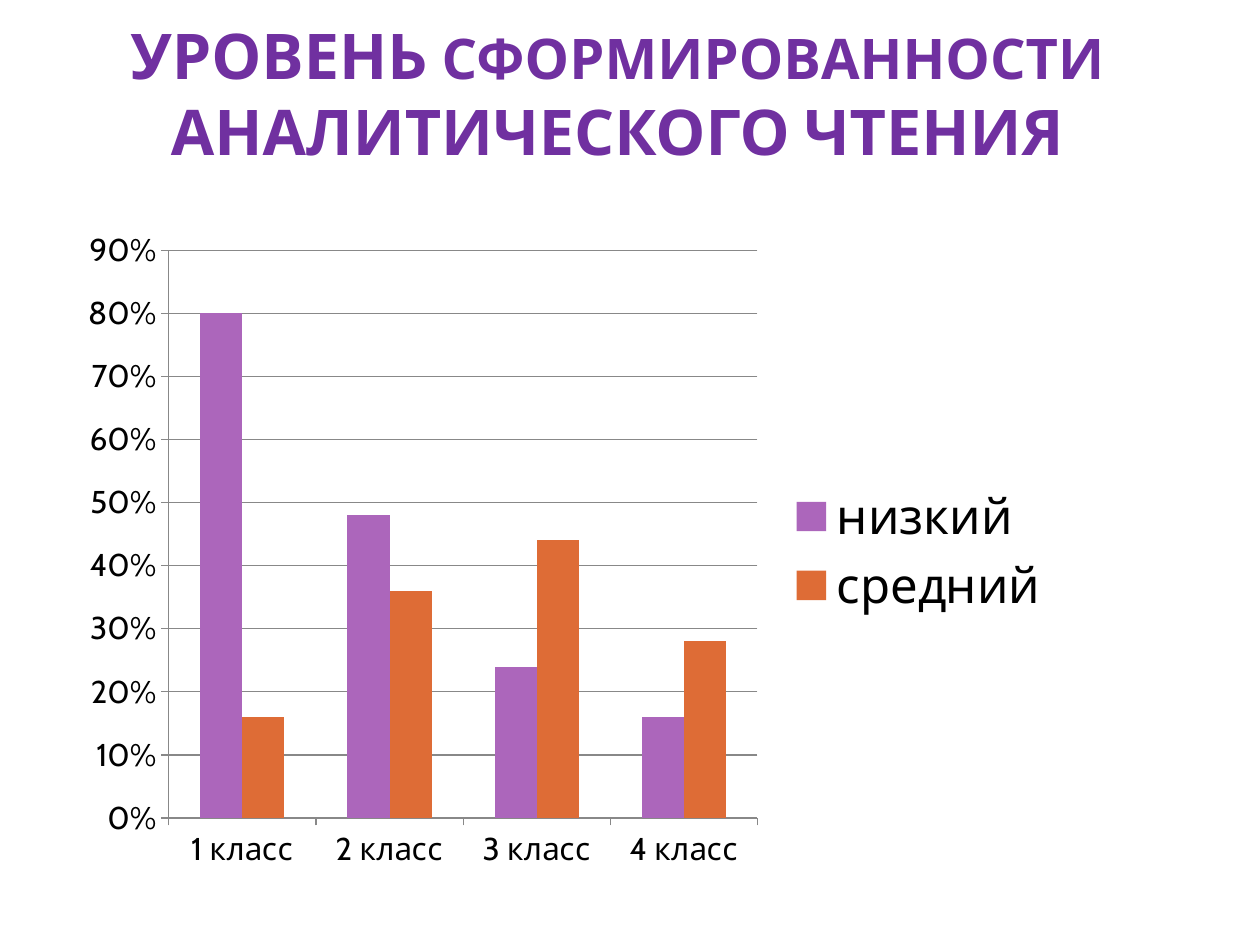
import pptx
import pptx.chart.data
import pptx.dml.color
import pptx.enum.chart
import pptx.enum.text
import pptx.oxml
import pptx.oxml.ns
import pptx.util

PX = 914400 // 126
FONT = "Cabin"
PURPLE, ORANGE, BLACK, GRAY = "7030A0", "DE6C36", "000000", "888888"
LILAC = "AC66BB"

TITLE = [
    [("УРОВЕНЬ ", 36), ("СФОРМИРОВАННОСТИ", 32)],
    [("АНАЛИТИЧЕСКОГО ЧТЕНИЯ", 36)],
]
GRADES = ["1 класс", "2 класс", "3 класс", "4 класс"]
LEVELS = [
    ("низкий", LILAC, [0.8, 0.48, 0.24, 0.16]),
    ("средний", ORANGE, [0.16, 0.36, 0.44, 0.28]),
]
PLOT_AREA = {"x": 0.1, "y": 0.05, "w": 0.59, "h": 0.85}


def rgb(value):
    return pptx.dml.color.RGBColor.from_string(value)


def apply(target, values):
    for name, value in values.items():
        setattr(target, name, value)


class SlideBuilder:
    def __init__(self, deck):
        self.page = deck.slides.add_slide(deck.slide_layouts[6])

    def frame(self, *lengths):
        return [length * PX for length in lengths]

    def font(self, font, size, color, bold=False):
        apply(font, {"name": FONT, "size": pptx.util.Pt(size), "bold": bold})
        font.color.rgb = rgb(color)

    def title(self, lines, left, top, width, height):
        box = self.page.shapes.add_textbox(*self.frame(left, top, width, height))
        apply(box.text_frame, {
            "word_wrap": True,
            "vertical_anchor": pptx.enum.text.MSO_ANCHOR.BOTTOM,
            "margin_left": 6 * PX, "margin_right": 6 * PX,
            "margin_top": 0, "margin_bottom": 0,
        })
        para = box.text_frame.paragraphs[0]
        para.alignment = pptx.enum.text.PP_ALIGN.CENTER
        for index, line in enumerate(lines):
            if index:
                para.add_line_break()
            for text, size in line:
                span = para.add_run()
                span.text = text
                self.font(span.font, size, PURPLE, bold=True)

    def column_chart(self, categories, series, left, top, width, height):
        data = pptx.chart.data.CategoryChartData(number_format="0%")
        data.categories = categories
        for name, _, values in series:
            data.add_series(name, values)
        chart = self.page.shapes.add_chart(
            pptx.enum.chart.XL_CHART_TYPE.COLUMN_CLUSTERED,
            *self.frame(left, top, width, height), data).chart
        apply(chart, {"has_title": False, "has_legend": True})
        self.font(chart.font, 18, BLACK)
        apply(chart.legend, {
            "position": pptx.enum.chart.XL_LEGEND_POSITION.RIGHT,
            "include_in_layout": False,
        })
        self.font(chart.legend.font, 28, BLACK)
        apply(chart.plots[0], {"gap_width": 150, "overlap": 0,
                               "vary_by_categories": False})
        for bars, (_, color, _) in zip(chart.plots[0].series, series):
            bars.format.fill.solid()
            bars.format.fill.fore_color.rgb = rgb(color)
        self.axes(chart)
        self.place_plot(chart, PLOT_AREA)

    def axes(self, chart):
        values = chart.value_axis
        apply(values, {"minimum_scale": 0, "maximum_scale": 0.9,
                       "major_unit": 0.1, "has_major_gridlines": True})
        apply(values.tick_labels, {"number_format": "0%",
                                   "number_format_is_linked": False})
        for axis in (chart.category_axis, values):
            axis.major_tick_mark = pptx.enum.chart.XL_TICK_MARK.OUTSIDE
        for part in (chart.category_axis, values, values.major_gridlines):
            part.format.line.color.rgb = rgb(GRAY)
            part.format.line.width = pptx.util.Pt(0.75)

    def place_plot(self, chart, fractions):
        """Fix the inner plot area as fractions of the chart."""
        area = chart.element.find(".//" + pptx.oxml.ns.qn("c:plotArea"))
        for old in area.findall(pptx.oxml.ns.qn("c:layout")):
            area.remove(old)
        settings = {"layoutTarget": "inner", "xMode": "edge", "yMode": "edge",
                    **fractions}
        tags = "".join(f'<c:{tag} val="{value}"/>' for tag, value in settings.items())
        area.insert(0, pptx.oxml.parse_xml(
            f'<c:layout {pptx.oxml.ns.nsdecls("c")}>'
            f"<c:manualLayout>{tags}</c:manualLayout></c:layout>"))


def main():
    deck = pptx.Presentation()
    apply(deck, {"slide_width": 1260 * PX, "slide_height": 945 * PX})
    slide = SlideBuilder(deck)
    slide.title(TITLE, 63, 44, 1109, 124)
    slide.column_chart(GRADES, LEVELS, 69, 217, 998, 668)
    deck.save("out.pptx")


if __name__ == "__main__":
    main()
